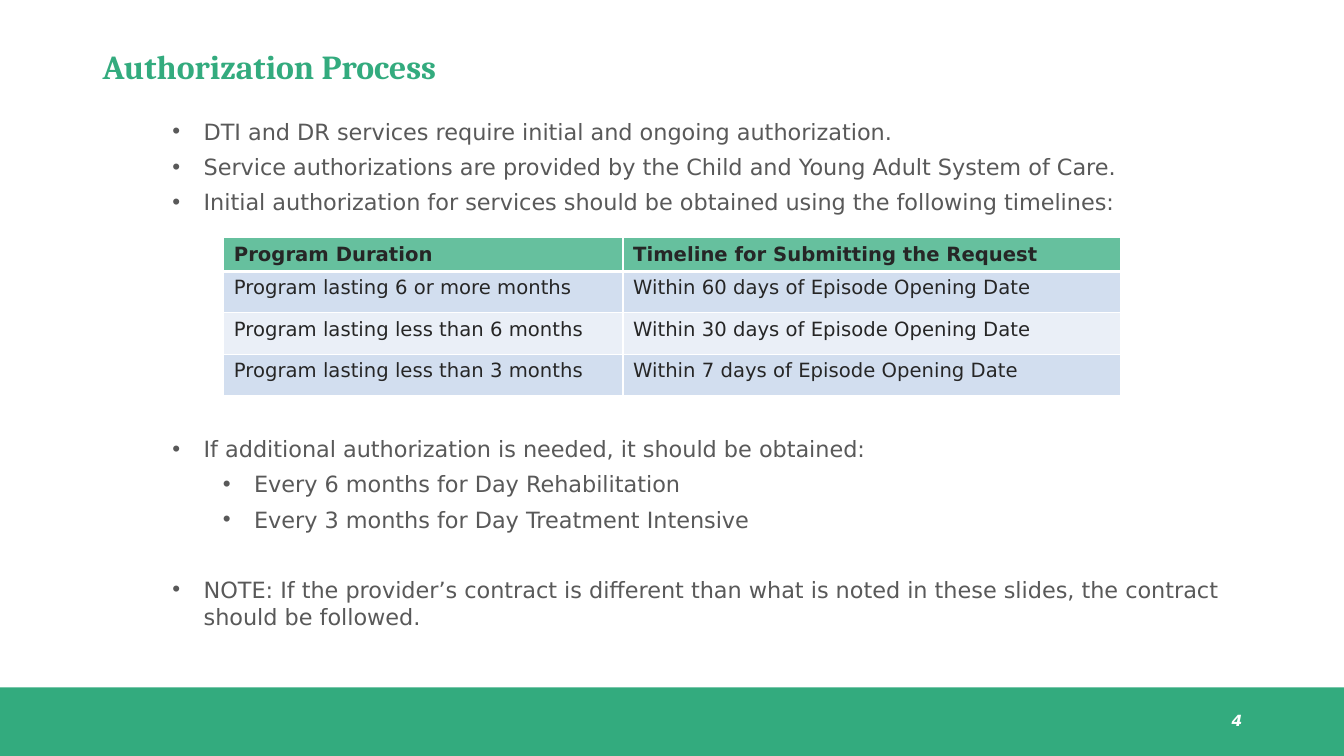
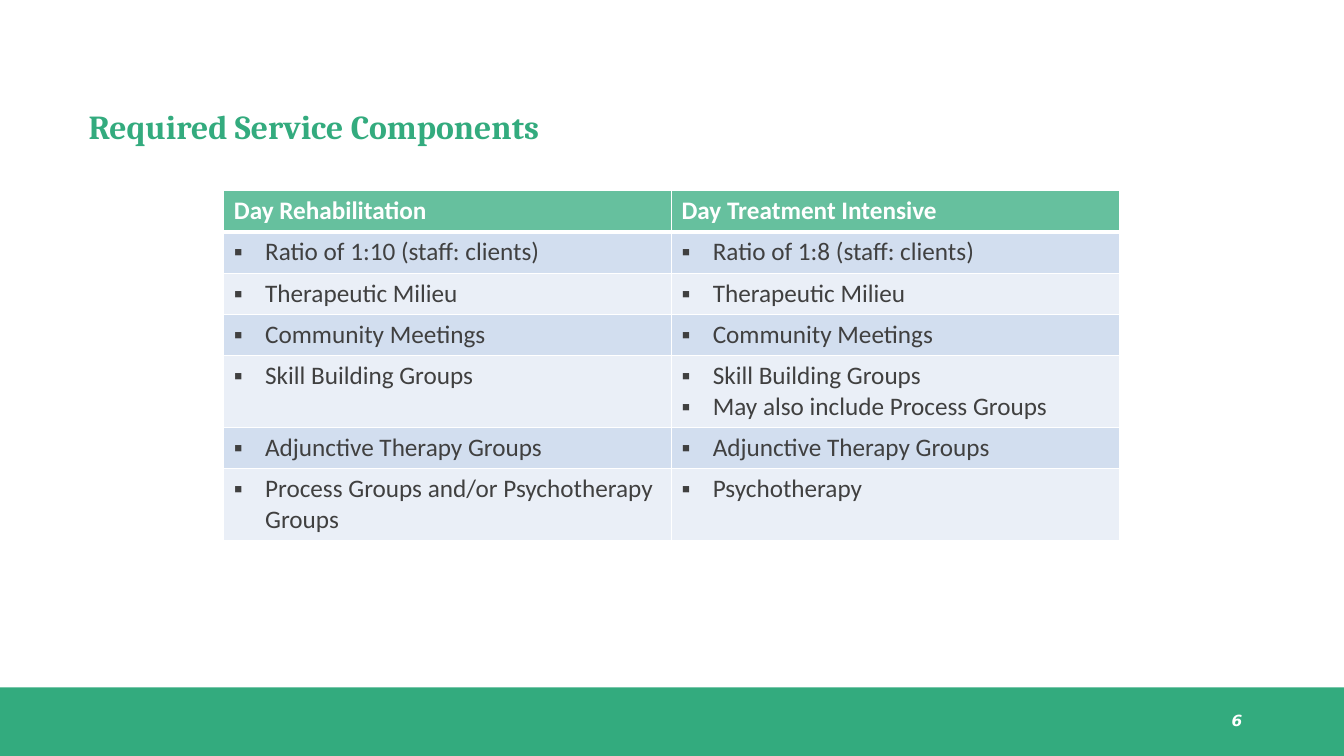
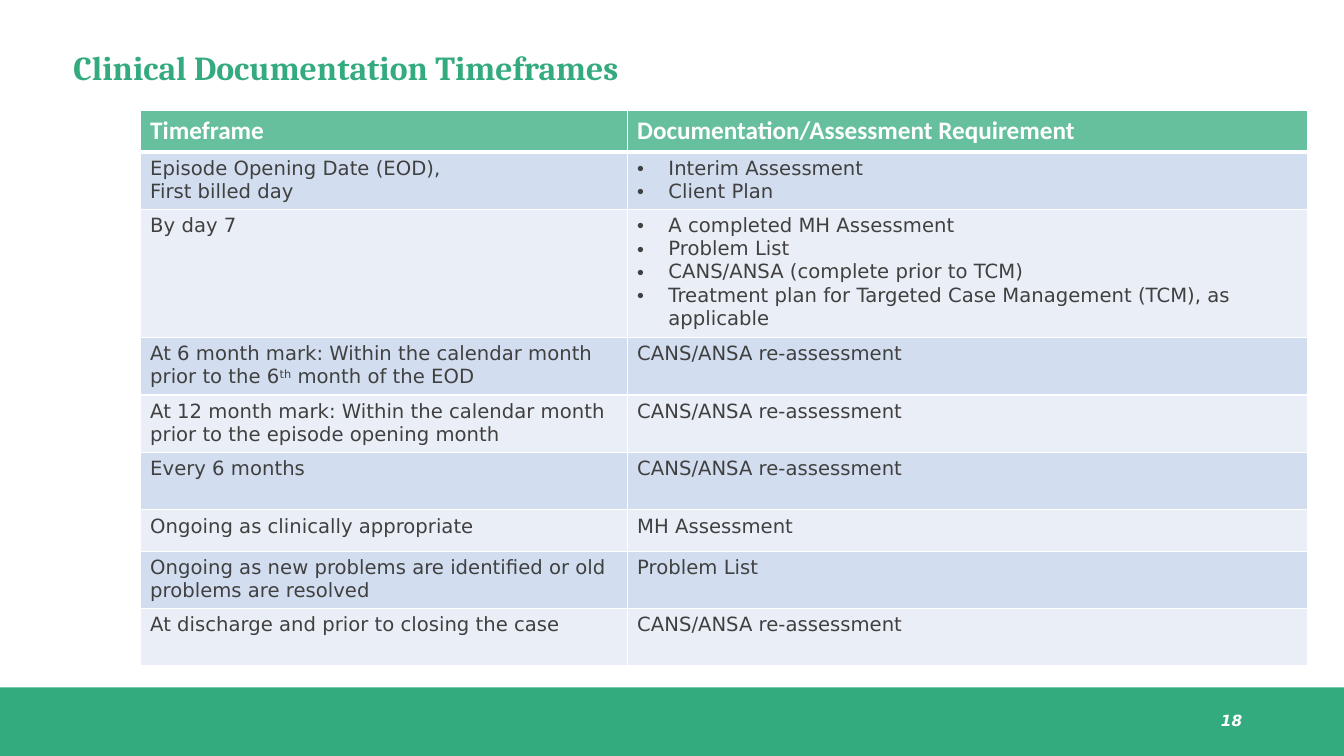
"""Three slides on day treatment authorization, components and timeframes."""
from lxml import etree
from pptx import Presentation
from pptx.dml.color import RGBColor
from pptx.enum.shapes import MSO_SHAPE
from pptx.enum.text import MSO_ANCHOR, PP_ALIGN
from pptx.oxml.ns import qn
from pptx.util import Inches, Pt

RECT = MSO_SHAPE.RECTANGLE
MID, TOP = MSO_ANCHOR.MIDDLE, MSO_ANCHOR.TOP
LEFT, RIGHT = PP_ALIGN.LEFT, PP_ALIGN.RIGHT

HEX = {
    "green": "33AB7E", "mint": "66C09E", "blue": "D2DEEF", "pale": "EAEFF7",
    "white": "FFFFFF", "ink": "262626", "dark": "404040", "gray": "595959",
}


def font(name, size, hue, bold=False, italic=False):
    return {"name": name, "size": Pt(size), "bold": bold, "italic": italic, "hue": hue}


TITLE = font("Cambria", 24, "green", bold=True)
NUMBER = font("DejaVu Sans", 11, "white", bold=True, italic=True)
BODY = font("DejaVu Sans", 16, "gray")
HEAD = font("Calibri", 18, "white", bold=True)


def rgb(hue):
    return RGBColor.from_string(HEX[hue])


class Deck:
    def __init__(self):
        self.prs = Presentation()
        self.prs.slide_width = Inches(13.33)
        self.prs.slide_height = Inches(7.5)
        self.slide = None

    def page(self, title, left, top, number):
        self.slide = self.prs.slides.add_slide(self.prs.slide_layouts[6])
        band = self.slide.shapes.add_shape(
            RECT, 0, Inches(6.82), self.prs.slide_width, Inches(0.68))
        band.shadow.inherit = False
        band.fill.solid()
        band.fill.fore_color.rgb = rgb("green")
        band.line.fill.background()
        head = self.box(left, top, 6.45, 0.95, MID).paragraphs[0]
        head.line_spacing = 0.9
        self.put(head, title, TITLE)
        foot = self.box(9.42, 6.95, 3, 0.4, MID).paragraphs[0]
        self.put(foot, number, NUMBER, RIGHT)

    def box(self, left, top, width, height, anchor=TOP):
        shape = self.slide.shapes.add_textbox(
            Inches(left), Inches(top), Inches(width), Inches(height))
        frame = shape.text_frame
        frame.word_wrap = True
        frame.vertical_anchor = anchor
        return frame

    def put(self, para, text, style, align=LEFT):
        para.alignment = align
        for i, part in enumerate(text.split("^")):
            run = para.add_run()
            run.text = part
            for key, value in style.items():
                if key == "hue":
                    run.font.color.rgb = rgb(value)
                else:
                    setattr(run.font, key, value)
            if i % 2:
                run._r.get_or_add_rPr().set("baseline", "30000")

    def mark(self, para, char="•", left=0.31):
        props = para._p.get_or_add_pPr()
        props.set("marL", str(Inches(left)))
        props.set("indent", str(-Inches(0.31)))
        etree.SubElement(props, qn("a:buFont")).set("typeface", "Arial")
        etree.SubElement(props, qn("a:buChar")).set("char", char)

    def points(self, left, top, width, height, items):
        frame = self.box(left, top, width, height)
        frame.margin_left = Inches(0.12)
        for i, (text, level, gap) in enumerate(items):
            para = frame.paragraphs[0] if i == 0 else frame.add_paragraph()
            self.mark(para, left=0.31 + 0.5 * level)
            para.space_after = Pt(6)
            if gap:
                para.space_before = Pt(gap)
            self.put(para, text, BODY)

    def edge(self, cell, row):
        props = cell._tc.get_or_add_tcPr()
        for i, side in enumerate(("lnL", "lnR", "lnT", "lnB")):
            thick = (row, side) in ((0, "lnB"), (1, "lnT"))
            line = etree.Element(qn("a:" + side), w=str(Pt(3 if thick else 1)))
            fill = etree.SubElement(line, qn("a:solidFill"))
            etree.SubElement(fill, qn("a:srgbClr")).set("val", HEX["white"])
            props.insert(i, line)

    def table(self, left, top, cols, rows, data, head, body, char="•"):
        grid = self.slide.shapes.add_table(
            len(rows), len(cols), Inches(left), Inches(top),
            Inches(sum(cols)), Inches(sum(rows))).table
        for col, width in zip(grid.columns, cols):
            col.width = Inches(width)
        for r, (height, texts) in enumerate(zip(rows, data)):
            grid.rows[r].height = Inches(height)
            hue = "mint" if r == 0 else ("pale", "blue")[r % 2]
            for c, text in enumerate(texts):
                cell = grid.cell(r, c)
                cell.fill.solid()
                cell.fill.fore_color.rgb = rgb(hue)
                self.edge(cell, r)
                frame = cell.text_frame
                listed = isinstance(text, list)
                for i, line in enumerate(text if listed else text.split("\n")):
                    para = frame.paragraphs[0] if i == 0 else frame.add_paragraph()
                    if listed:
                        self.mark(para, char)
                    self.put(para, line, body if r else head)


def main():
    deck = Deck()

    deck.page("Authorization Process", 0.92, 0.21, "4")
    deck.points(1.59, 1.12, 11.13, 5.23, [
        ("DTI and DR services require initial and ongoing authorization.", 0, 0),
        ("Service authorizations are provided by the Child and Young Adult System of Care.", 0, 0),
        ("Initial authorization for services should be obtained using the following timelines:", 0, 0),
        ("If additional authorization is needed, it should be obtained:", 0, 151),
        ("Every 6 months for Day Rehabilitation", 1, 0),
        ("Every 3 months for Day Treatment Intensive", 1, 0),
        ("NOTE: If the provider’s contract is different than what is noted in these slides, "
         "the contract should be followed.", 0, 25),
    ])
    deck.table(2.22, 2.36, [3.96, 4.93], [0.33] + [0.41] * 3, [
        ("Program Duration", "Timeline for Submitting the Request"),
        ("Program lasting 6 or more months", "Within 60 days of Episode Opening Date"),
        ("Program lasting less than 6 months", "Within 30 days of Episode Opening Date"),
        ("Program lasting less than 3 months", "Within 7 days of Episode Opening Date"),
    ], font("DejaVu Sans", 14, "ink", bold=True), font("DejaVu Sans", 14, "ink"))

    deck.page("Required Service Components", 0.78, 0.8, "6")
    deck.table(2.22, 1.89, [4.44] * 2, [0.41] * 4 + [0.71, 0.41, 0.71], [
        ("Day Rehabilitation", "Day Treatment Intensive"),
        (["Ratio of 1:10 (staff: clients)"], ["Ratio of 1:8 (staff: clients)"]),
        (["Therapeutic Milieu"], ["Therapeutic Milieu"]),
        (["Community Meetings"], ["Community Meetings"]),
        (["Skill Building Groups"],
         ["Skill Building Groups", "May also include Process Groups"]),
        (["Adjunctive Therapy Groups"], ["Adjunctive Therapy Groups"]),
        (["Process Groups and/or Psychotherapy Groups"], ["Psychotherapy"]),
    ], HEAD, font("Calibri", 18, "dark"), "▪")

    deck.page("Clinical Documentation Timeframes", 0.63, 0.22, "18")
    again = "CANS/ANSA re-assessment"
    rows = [0.41, 0.57, 1.27] + [0.57] * 3 + [0.41] + [0.57] * 2
    deck.table(1.39, 1.1, [4.83, 6.75], rows, [
        ("Timeframe", "Documentation/Assessment Requirement"),
        ("Episode Opening Date (EOD),\nFirst billed day",
         ["Interim Assessment", "Client Plan"]),
        ("By day 7", [
            "A completed MH Assessment", "Problem List",
            "CANS/ANSA (complete prior to TCM)",
            "Treatment plan for Targeted Case Management (TCM), as applicable"]),
        ("At 6 month mark: Within the calendar month prior to the 6^th^ month of the EOD", again),
        ("At 12 month mark: Within the calendar month prior to the episode opening month", again),
        ("Every 6 months", again),
        ("Ongoing as clinically appropriate", "MH Assessment"),
        ("Ongoing as new problems are identified or old problems are resolved", "Problem List"),
        ("At discharge and prior to closing the case", again),
    ], HEAD, font("DejaVu Sans", 14, "dark"))

    deck.prs.save("out.pptx")


if __name__ == "__main__":
    main()
